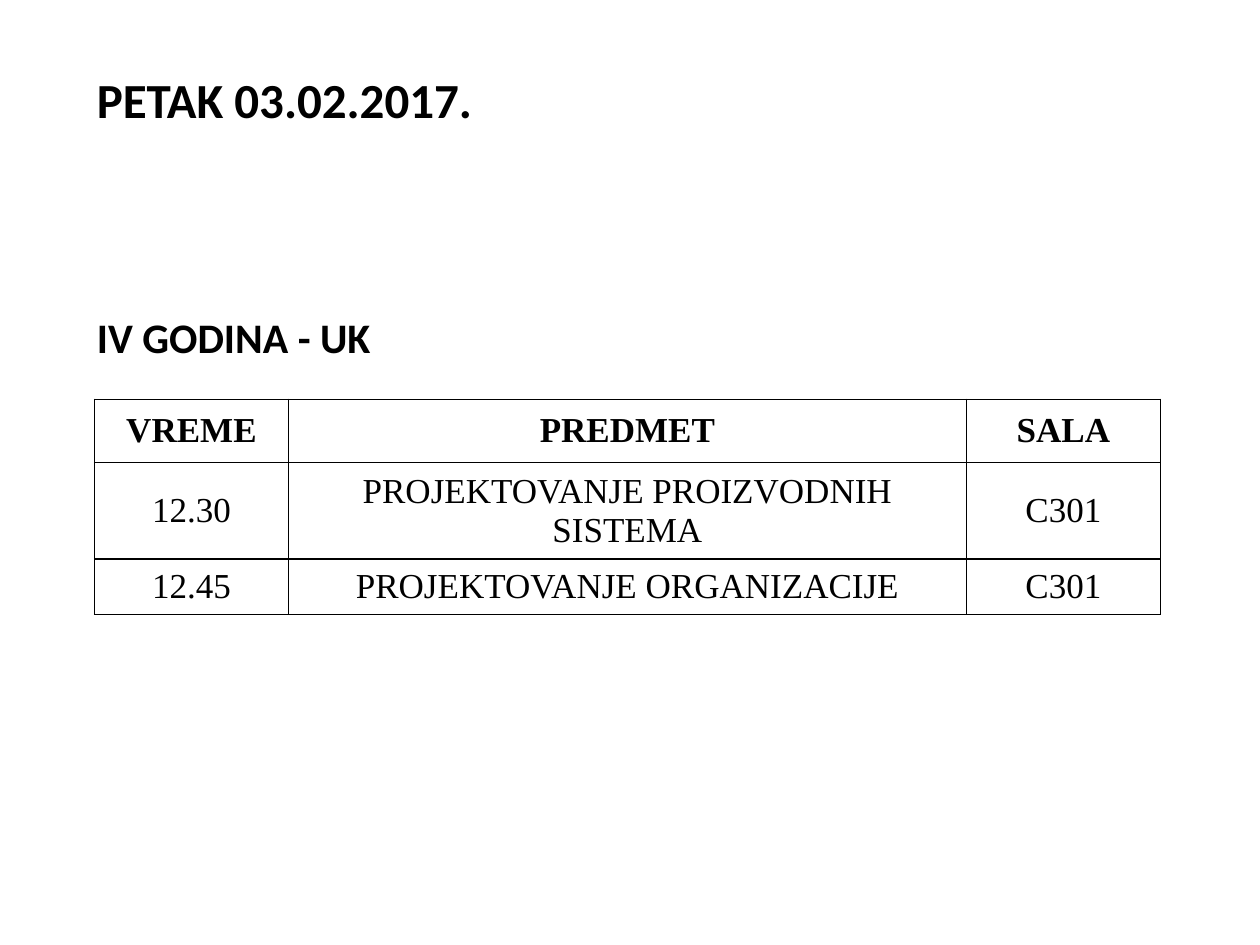
from dataclasses import dataclass

from lxml import etree
from pptx import Presentation
from pptx.dml.color import RGBColor
from pptx.enum.text import MSO_ANCHOR, PP_ALIGN
from pptx.oxml.ns import qn
from pptx.util import Inches, Pt

MIDDLE, TOP = MSO_ANCHOR.MIDDLE, MSO_ANCHOR.TOP
CENTER = PP_ALIGN.CENTER


@dataclass(frozen=True)
class Theme:
    ink: str = "000000"
    heading_font: str = "Calibri"
    table_font: str = "Times New Roman"
    date_size: int = 28
    year_size: int = 24
    table_size: int = 20
    border: float = 1


THEME = Theme()
COL_WIDTHS = (1.54, 5.38, 1.54)
ROW_HEIGHTS = (0.5, 0.76, 0.44)
SCHEDULE = (
    ("VREME", "PREDMET", "SALA"),
    ("12.30", "PROJEKTOVANJE PROIZVODNIH SISTEMA", "C301"),
    ("12.45", "PROJEKTOVANJE ORGANIZACIJE", "C301"),
)


def style_text(p, font, size, bold):
    for r in p.runs:
        r.font.name = font
        r.font.size = Pt(size)
        r.font.bold = bold
        r.font.color.rgb = RGBColor.from_string(THEME.ink)


def add_heading(slide, box, text, size, anchor):
    sp = slide.shapes.add_textbox(*map(Inches, box))
    tf = sp.text_frame
    tf.word_wrap = False
    tf.vertical_anchor = anchor
    tf.text = text
    style_text(tf.paragraphs[0], THEME.heading_font, size, True)


def add_borders(cell):
    """Draw all four cell edges; call before the fill, which must follow them."""
    tc_pr = cell._tc.get_or_add_tcPr()
    for edge in ("a:lnL", "a:lnR", "a:lnT", "a:lnB"):
        ln = etree.SubElement(tc_pr, qn(edge), w=str(Pt(THEME.border)))
        fill = etree.SubElement(ln, qn("a:solidFill"))
        etree.SubElement(fill, qn("a:srgbClr"), val=THEME.ink)


def add_schedule(slide, left, top, rows):
    frame = slide.shapes.add_table(
        len(rows), len(COL_WIDTHS), Inches(left), Inches(top),
        Inches(sum(COL_WIDTHS)), Inches(sum(ROW_HEIGHTS)))
    table = frame.table
    table.horz_banding = False
    table.first_row = False
    for column, width in zip(table.columns, COL_WIDTHS):
        column.width = Inches(width)
    for i, (row, height, texts) in enumerate(zip(table.rows, ROW_HEIGHTS, rows)):
        row.height = Inches(height)
        for cell, text in zip(row.cells, texts):
            add_borders(cell)
            cell.fill.background()
            cell.vertical_anchor = MIDDLE
            cell.text = text
            p = cell.text_frame.paragraphs[0]
            p.alignment = CENTER
            style_text(p, THEME.table_font, THEME.table_size, i == 0)


def main():
    prs = Presentation()
    prs.slide_width, prs.slide_height = Inches(10), Inches(7.5)
    slide = prs.slides.add_slide(prs.slide_layouts[6])
    add_heading(slide, (0.67, 2.42, 2.72, 0.5), "IV GODINA - UK",
                THEME.year_size, MIDDLE)
    add_schedule(slide, 0.75, 3.17, SCHEDULE)
    add_heading(slide, (0.67, 0.5, 3.4, 0.57), "PETAK 03.02.2017.",
                THEME.date_size, TOP)
    prs.save("out.pptx")


if __name__ == "__main__":
    main()
